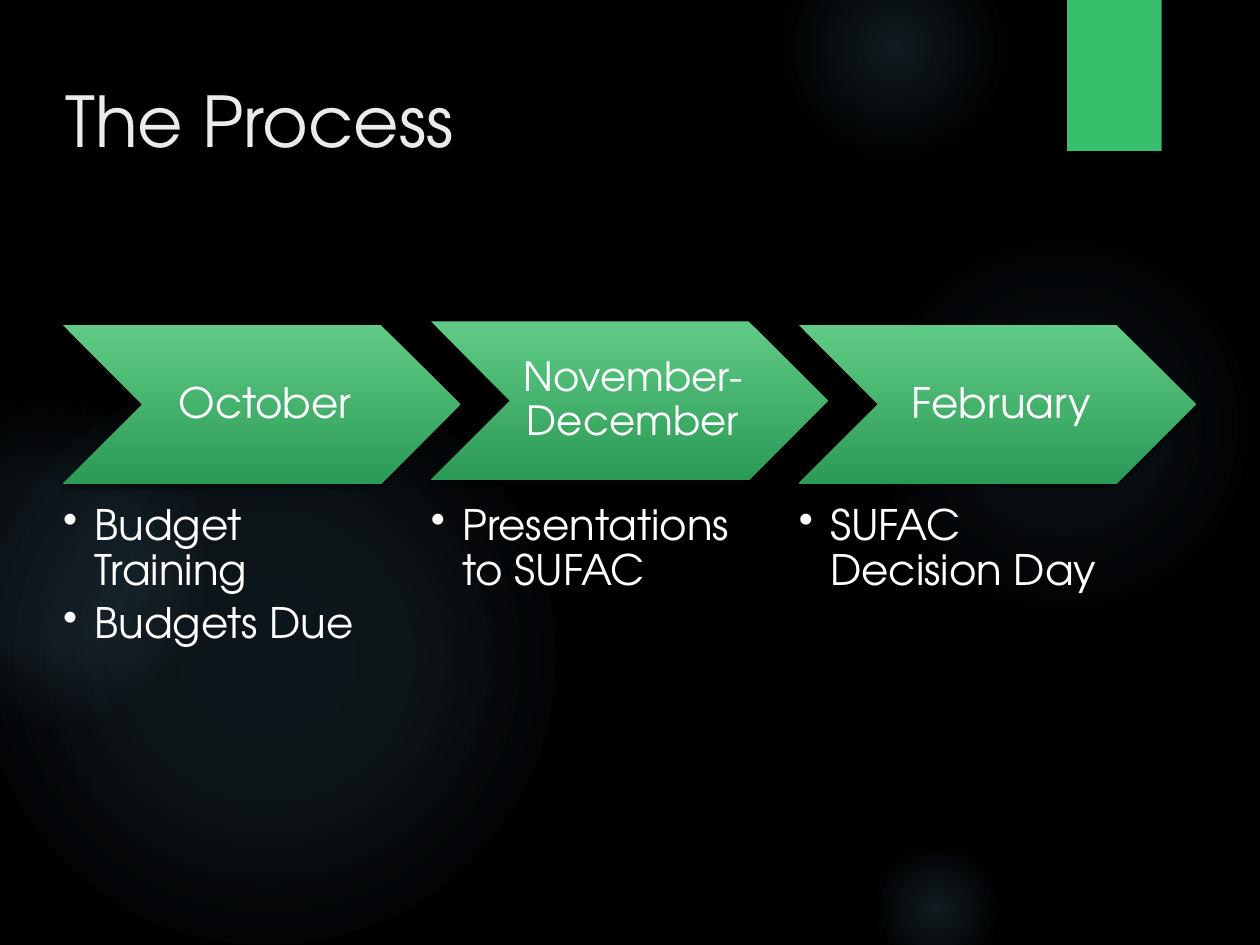
"""Build the budget process slide with three chevron stages."""
from lxml.etree import SubElement
from pptx import Presentation
from pptx.dml.color import RGBColor
from pptx.enum.shapes import MSO_SHAPE as Shape
from pptx.enum.text import MSO_ANCHOR as Anchor, PP_ALIGN as Align
from pptx.oxml import parse_xml
from pptx.oxml.ns import nsdecls, qn
from pptx.util import Inches, Pt

COLORS = {"background": "000000", "glow": "7AC4F0", "tab": "36C06B", "title": "EBEBEB",
          "top": "5FCB86", "bottom": "2B9A56", "text": "FFFFFF"}
FONT = "TeX Gyre Adventor"

deck = Presentation()
deck.slide_width, deck.slide_height = Inches(10), Inches(7.5)
page = deck.slides.add_slide(deck.slide_layouts[6])
page.background.fill.solid()
page.background.fill.fore_color.rgb = RGBColor.from_string(COLORS["background"])


def add_figure(kind, bounds, stops, direction, shadow=False):
    figure = page.shapes.add_shape(kind, *map(Inches, bounds))
    figure.line.fill.background()
    figure.shadow.inherit = False
    figure.fill.background()
    stop_xml = "".join(
        f'<a:gs pos="{position * 1000}"><a:srgbClr val="{color}">'
        f'<a:alpha val="{opacity * 1000}"/></a:srgbClr></a:gs>'
        for position, color, opacity in stops)
    gradient = parse_xml(f'<a:gradFill {nsdecls("a")} rotWithShape="1">'
                         f'<a:gsLst>{stop_xml}</a:gsLst>{direction}</a:gradFill>')
    properties = figure.element.spPr
    properties.replace(properties.find(qn("a:noFill")), gradient)
    if shadow:
        outer = SubElement(properties.find(qn("a:effectLst")), qn("a:outerShdw"),
                           blurRad=str(Pt(3)), dist=str(Pt(2)), dir="5400000", rotWithShape="0")
        black = SubElement(outer, qn("a:srgbClr"), val="000000")
        SubElement(black, qn("a:alpha"), val="45000")


def add_text(bounds, lines, size, color, anchor=Anchor.TOP, margins=(0, 0, 0, 0)):
    frame = page.shapes.add_textbox(*map(Inches, bounds)).text_frame
    frame.word_wrap = True
    frame.vertical_anchor = anchor
    (frame.margin_left, frame.margin_top,
     frame.margin_right, frame.margin_bottom) = map(Inches, margins)
    frame.text = "\n".join(lines)
    for para in frame.paragraphs:
        for span in para.runs:
            span.font.name, span.font.size = FONT, Pt(size)
            span.font.color.rgb = RGBColor.from_string(COLORS[color])
    return frame.paragraphs


radial = ('<a:path path="circle"><a:fillToRect l="50000" t="50000" '
          'r="50000" b="50000"/></a:path>')
downward = '<a:lin ang="5400000" scaled="0"/>'

glows = [(6.89, 1.83, 3.08, 7, 6, 69), (6.22, -0.5, 1.75, 14, 7, 73),
         (6.89, 6.67, 1.08, 14, 7, 66), (-0.17, 2.92, 4.58, 11, 10, 75),
         (-0.92, 3.17, 2.58, 8, 8, 72)]
for left, top, size, center, middle, edge in glows:
    stops = [(0, COLORS["glow"], center), (36, COLORS["glow"], middle), (edge, COLORS["glow"], 0)]
    add_figure(Shape.OVAL, (left, top, size, size), stops, radial)

tab_stops = [(0, COLORS["tab"], 100), (100, COLORS["tab"], 100)]
add_figure(Shape.RECTANGLE, (8.47, 0, 0.75, 1.2), tab_stops, downward, shadow=True)
add_text((0.42, 0.25, 6.94, 1.08), ["The Process"], 40, "title",
         Anchor.BOTTOM, (0.1, 0.05, 0.1, 0.05))

stages = [("October", 24, 2.58, ["Budget Training", "Budgets Due"]),
          ("November-December", 23, 2.55, ["Presentations to SUFAC"]),
          ("February", 24, 2.58, ["SUFAC Decision Day"])]
stage_stops = [(0, COLORS["top"], 100), (100, COLORS["bottom"], 100)]
for index, (month, size, top, tasks) in enumerate(stages):
    left = 0.5 + index * 2.92
    add_figure(Shape.CHEVRON, (left, top, 3.15, 1.26), stage_stops, downward, shadow=True)
    label = add_text((left + 0.63, top, 1.89, 1.26), [month], size, "text",
                     Anchor.MIDDLE, (0.1, 0.04, 0.04, 0.04))[0]
    label.alignment = Align.CENTER
    label.line_spacing = 0.9
    for para in add_text((left, 4, 2.52, 1.15), tasks, 24, "text"):
        para.line_spacing = 0.9
        para.space_after = Pt(4.3)
        indents = para._p.get_or_add_pPr()
        indents.set("marL", str(Inches(0.25)))
        indents.set("indent", str(-Inches(0.25)))
        SubElement(indents, qn("a:buChar"), char="•")

deck.save("out.pptx")
